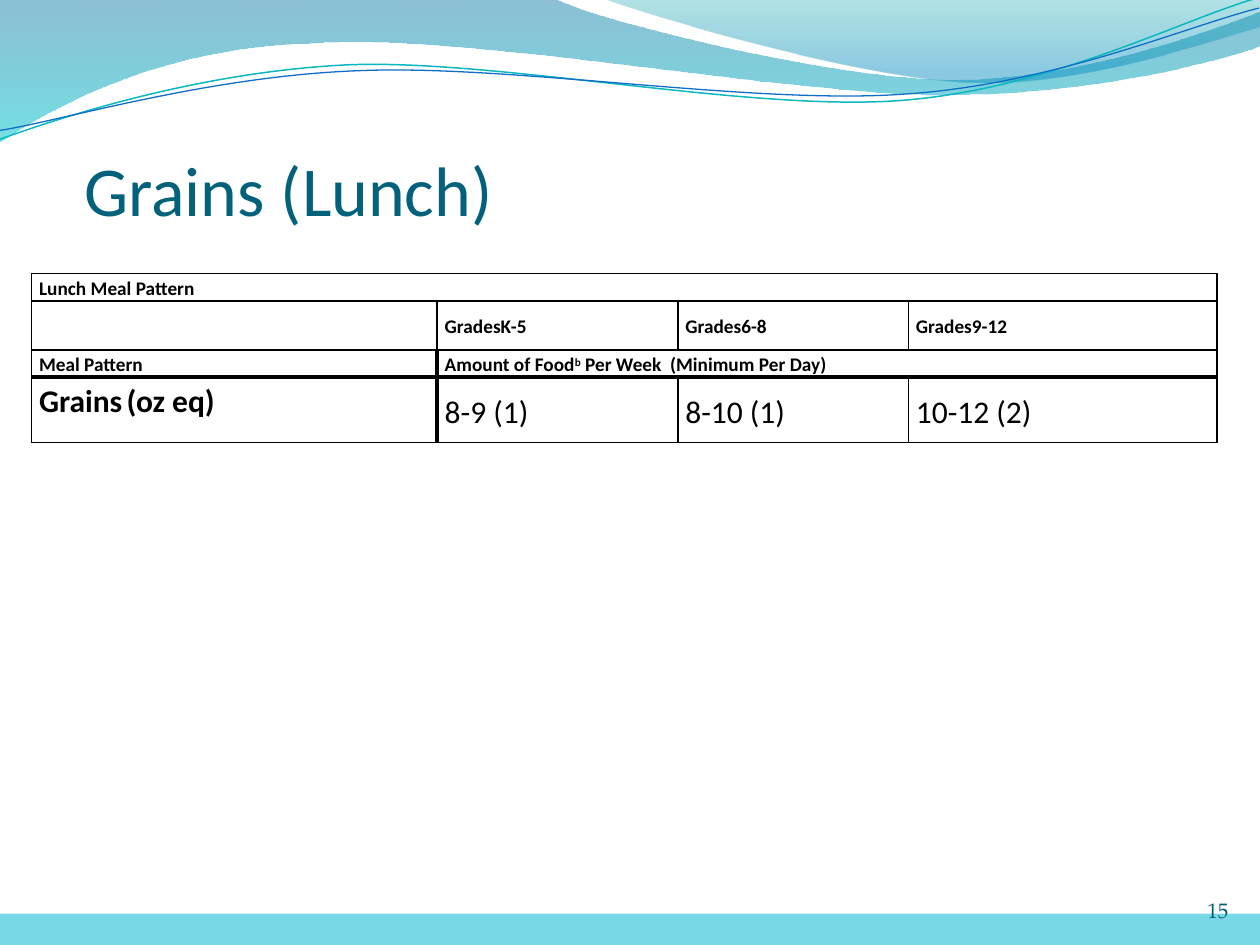
from dataclasses import dataclass

from lxml import etree
from pptx import Presentation
from pptx import util as u
from pptx.dml.color import RGBColor
from pptx.enum import shapes, text
from pptx.oxml.ns import qn


@dataclass(frozen=True)
class Theme:
    title: str = "04617B"
    number: str = "045D75"
    ink: str = "000000"
    paper: str = "FFFFFF"
    footer: str = "77D9E8"
    teal_line: str = "0AB8BF"
    blue_line: str = "0F6FC6"
    wide_wave: tuple = ((0, "0074A1", 45), (1, "00C6CF", 55))
    right_wave: tuple = ((0, "00A1A9", 30), (0.8, "008BBF", 45))
    body_font: str = "Calibri"
    number_font: str = "TeX Gyre Pagella"
    title_size: float = 40
    grains_size: float = 18
    label_size: float = 11
    number_size: float = 12
    thin: float = 1
    thick: float = 2.25
    ripple_turn: float = -2.7


class GridSlide:
    COLUMNS, ROWS = 10, 7.5

    def __init__(self, deck, theme):
        self.theme = theme
        self.slide = deck.slides.add_slide(deck.slide_layouts[5])
        self.column = deck.slide_width / self.COLUMNS
        self.row = deck.slide_height / self.ROWS

    def place(self, x, y):
        return round(x * self.column), round(y * self.row)

    def box(self, left, top, width, height):
        return *self.place(left, top), *self.place(width, height)

    def run(self, paragraph, words, size, color, font=None, bold=False, raised=False):
        run = paragraph.add_run()
        run.text = words
        run.font.size = u.Pt(size)
        run.font.name = font or self.theme.body_font
        run.font.bold = bold
        run.font.color.rgb = RGBColor.from_string(color)
        if raised:
            run.font._element.set("baseline", "30000")

    def frame(self, holder, align, inset_top=0):
        frame = holder.text_frame
        frame.word_wrap = True
        frame.auto_size = text.MSO_AUTO_SIZE.NONE
        frame.vertical_anchor = text.MSO_ANCHOR.BOTTOM
        frame.margin_left = frame.margin_right = frame.margin_bottom = 0
        frame.margin_top = self.place(0, inset_top)[1]
        paragraph = frame.paragraphs[0]
        paragraph.alignment = align
        return paragraph

    def title(self, words, *area):
        heading = self.slide.shapes.title
        heading.element.getparent().append(heading.element)
        heading.left, heading.top, heading.width, heading.height = self.box(*area)
        paragraph = self.frame(heading, text.PP_ALIGN.LEFT, 0.05)
        self.run(paragraph, words, self.theme.title_size, self.theme.title)

    def page_number(self, words, *area):
        holder = self.slide.shapes.add_textbox(*self.box(*area))
        paragraph = self.frame(holder, text.PP_ALIGN.RIGHT)
        self.run(paragraph, words, self.theme.number_size, self.theme.number,
                 self.theme.number_font)

    def band(self, color, *area):
        band = self.slide.shapes.add_shape(shapes.MSO_SHAPE.RECTANGLE, *self.box(*area))
        band.shadow.inherit = False
        band.fill.solid()
        band.fill.fore_color.rgb = RGBColor.from_string(color)
        band.line.fill.background()

    def curve(self, parent, start, pieces, close):
        points = [self.place(*point) for piece in pieces for point in piece]
        builder = parent.build_freeform(*self.place(*start), scale=1.0)
        builder.add_line_segments(points, close=close)
        curve = builder.convert_to_shape()
        curve.shadow.inherit = False
        segments = iter(list(curve.element.iter(qn("a:lnTo"))))
        for piece in pieces:
            bend, *others = [next(segments) for _ in piece]
            if others:
                bend.tag = qn("a:cubicBezTo")
                for other in others:
                    bend.append(other[0])
                    other.getparent().remove(other)
        return curve

    def wave(self, stops, start, *pieces):
        wave = self.curve(self.slide.shapes, start, pieces, True)
        wave.line.fill.background()
        wave.fill.gradient()
        wave.fill.gradient_angle = 270
        for stop, (position, color, _) in zip(wave.fill.gradient_stops, stops):
            stop.position = position
            stop.color.rgb = RGBColor.from_string(color)
        tints = wave.element.spPr.iter(qn("a:srgbClr"))
        for tint, (_, _, opacity) in zip(tints, stops):
            etree.SubElement(tint, qn("a:alpha"), val=str(opacity * 1000))

    def ripple(self, group, color, weight, start, *pieces):
        ripple = self.curve(group.shapes, start, pieces, False)
        ripple.rotation = self.theme.ripple_turn
        ripple.fill.background()
        ripple.line.color.rgb = RGBColor.from_string(color)
        ripple.line.width = u.Pt(weight)

    def borders(self, cell, thick_sides):
        properties = cell._tc.get_or_add_tcPr()
        for side in "LRTB":
            weight = self.theme.thick if side in thick_sides else self.theme.thin
            line = etree.SubElement(properties, qn(f"a:ln{side}"), w=str(u.Pt(weight)))
            fill = etree.SubElement(line, qn("a:solidFill"))
            etree.SubElement(fill, qn("a:srgbClr"), val=self.theme.ink)

    def cell(self, cell, runs, bold, anchor, thick_sides):
        cell.margin_left = cell.margin_right = self.place(0.06, 0)[0]
        cell.margin_top = cell.margin_bottom = 0
        cell.vertical_anchor = anchor
        self.borders(cell, thick_sides)
        cell.fill.solid()
        cell.fill.fore_color.rgb = RGBColor.from_string(self.theme.paper)
        paragraph = cell.text_frame.paragraphs[0]
        if runs:
            paragraph.line_spacing = 1.15
        for words, size, raised in runs:
            self.run(paragraph, words, size, self.theme.ink, bold=bold, raised=raised)

    def meal_table(self, rows, left, top, widths, heights, merges):
        area = self.box(left, top, sum(widths), sum(heights))
        table = self.slide.shapes.add_table(len(rows), len(widths), *area).table
        table.first_row = table.horz_banding = False
        for column, width in zip(table.columns, widths):
            column.width = self.place(width, 0)[0]
        for row, height in zip(table.rows, heights):
            row.height = self.place(0, height)[1]
        pattern, grains = len(rows) - 2, len(rows) - 1
        for r, row in enumerate(rows):
            for c, runs in enumerate(row):
                thick = {pattern: "B", grains: "T"}.get(r, "")
                if thick:
                    thick += {0: "R", 1: "L"}.get(c, "")
                corner = r == grains and c == 0
                anchor = text.MSO_ANCHOR.TOP if corner else text.MSO_ANCHOR.MIDDLE
                self.cell(table.cell(r, c), runs, r < grains or c == 0, anchor, thick)
        for first, last in merges:
            table.cell(*first).merge(table.cell(*last))


def main():
    theme = Theme()
    deck = Presentation()
    deck.slide_width, deck.slide_height = u.Inches(10), u.Inches(7.5)
    page = GridSlide(deck, theme)

    page.wave(
        theme.wide_wave, (0, 0), [(4.4, -0.01)],
        [(4.76, 0.17), (6.64, 0.63), (7.58, 0.63)],
        [(8.53, 0.63), (9.58, 0.26), (10, 0.09)], [(10.01, 0.36)],
        [(9.83, 0.44), (8.7, 0.76), (7.46, 0.75)],
        [(6.22, 0.75), (3.82, 0.28), (2.57, 0.34)],
        [(1.29, 0.36), (0.46, 0.83), (-0.01, 1.13)],
    )
    page.wave(
        theme.right_wave, (4.79, -0.01),
        [(5.09, 0.11), (6.82, 0.62), (7.69, 0.65)],
        [(8.56, 0.69), (9.61, 0.32), (10, 0.21)], [(10, 0)],
    )
    ripples = page.slide.shapes.add_group_shape()
    page.ripple(
        ripples, theme.teal_line, 0.85, (-0.02, 0.87),
        [(0.47, 0.72), (1.58, 0.41), (2.77, 0.41)],
        [(3.96, 0.42), (5.91, 0.93), (7.12, 0.9)],
        [(8.32, 0.87), (9.4, 0.36), (10, 0.22)],
    )
    page.ripple(
        ripples, theme.blue_line, 0.75, (-0.02, 0.8),
        [(0.46, 0.75), (1.64, 0.45), (2.83, 0.46)],
        [(4.03, 0.46), (5.96, 0.88), (7.16, 0.85)],
        [(8.35, 0.83), (9.42, 0.42), (10.01, 0.3)],
    )

    page.title("Grains (Lunch)", 0.67, 0.98, 9.08, 0.85)

    def label(words, raised=False):
        return words, theme.label_size, raised

    def portion(words):
        return words, theme.grains_size, False

    page.meal_table(
        [
            [[label("Lunch Meal Pattern")], [], [], []],
            [[], *([label(f"Grades{span}")] for span in ("K-5", "6-8", "9-12"))],
            [
                [label("Meal Pattern")],
                [label("Amount of Food"), label("b", True),
                 label(" Per Week  (Minimum Per Day)")],
                [], [],
            ],
            [
                [portion("Grains"), label(" "), portion("(oz eq)")],
                *([portion(amount)] for amount in ("8-9 (1)", "8-10 (1)", "10-12 (2)")),
            ],
        ],
        0.25, 2.17, (3.22, 1.91, 1.83, 2.45), (0.2, 0.39, 0.2, 0.52),
        [((0, 0), (0, 3)), ((2, 1), (2, 3))],
    )
    page.band(theme.footer, 0, 7.25, 10, 0.25)
    page.page_number("15", 8.92, 6.92, 0.83, 0.4)
    deck.save("out.pptx")


if __name__ == "__main__":
    main()
